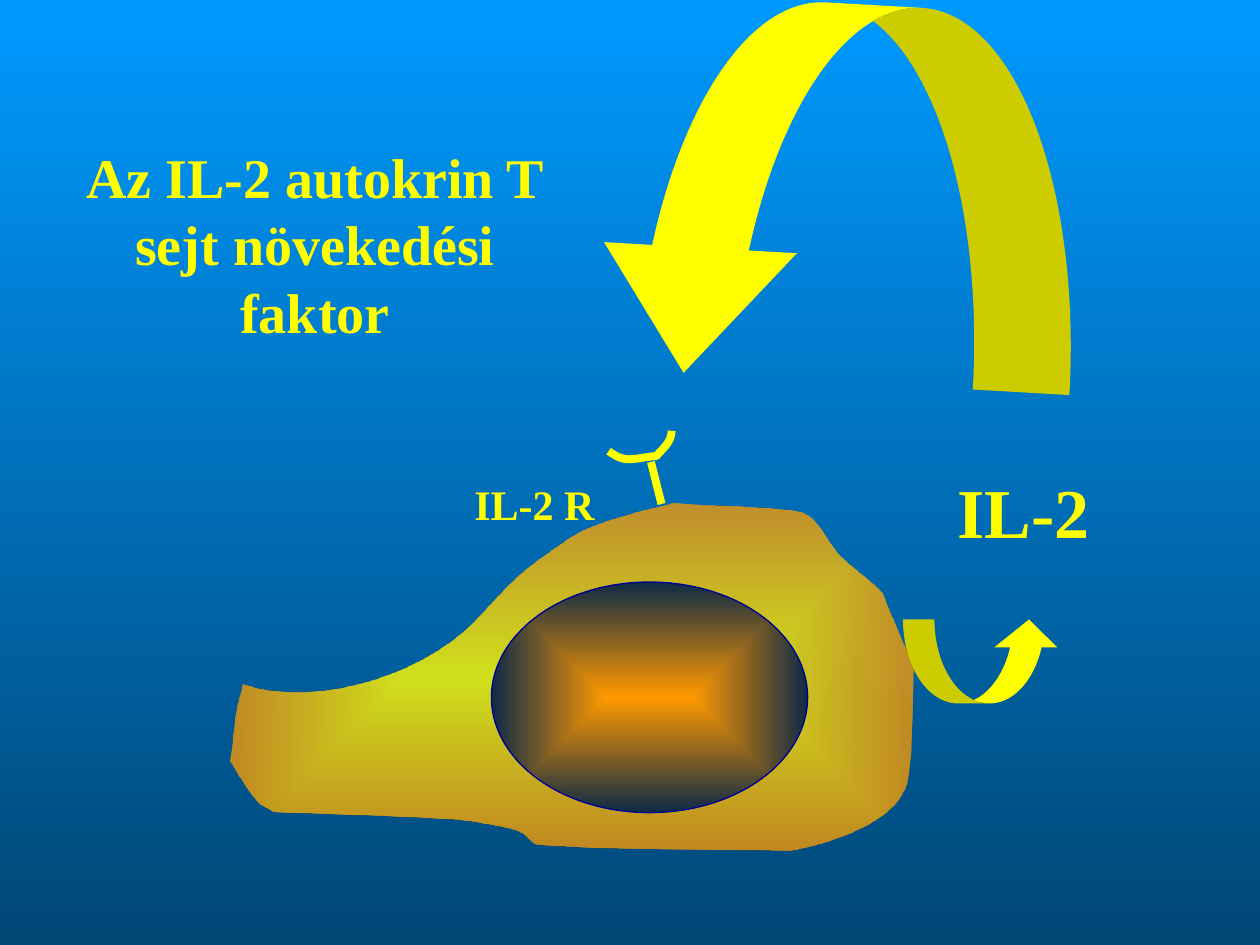
from dataclasses import dataclass

from lxml.etree import SubElement
from pptx import Presentation
from pptx.dml.color import RGBColor
from pptx.enum.shapes import MSO_CONNECTOR, MSO_SHAPE
from pptx.enum.text import MSO_AUTO_SIZE, PP_ALIGN
from pptx.oxml import parse_xml
from pptx.oxml.ns import nsdecls, qn
from pptx.util import Pt


@dataclass(frozen=True)
class Theme:
    font: str = "Times New Roman"
    yellow: str = "FFFF00"
    orange: str = "FF9900"
    navy: str = "0E2A46"
    rim: str = "000099"
    sky: str = "0099FF"
    deep: str = "004776"
    title: int = 32
    cytokine: int = 40
    receptor: int = 24


theme = Theme()
rgb = RGBColor.from_string

deck = Presentation()
deck.slide_width, deck.slide_height = Pt(720), Pt(540)
slide = deck.slides.add_slide(deck.slide_layouts[6])
shapes = slide.shapes

backdrop = slide.background.fill
backdrop.gradient()
backdrop.gradient_angle = 270
for stop, color in zip(backdrop.gradient_stops, (theme.sky, theme.deep)):
    stop.color.rgb = rgb(color)


def add_label(text, left, top, width, height, *, size, align=PP_ALIGN.LEFT):
    frame = shapes.add_textbox(Pt(left), Pt(top), Pt(width), Pt(height)).text_frame
    frame.word_wrap = True
    frame.auto_size = MSO_AUTO_SIZE.SHAPE_TO_FIT_TEXT
    paragraph = frame.paragraphs[0]
    paragraph.alignment = align
    run = paragraph.add_run()
    run.text = text
    run.font.name, run.font.size, run.font.bold = theme.font, Pt(size), True
    run.font.color.rgb = rgb(theme.yellow)


def add_curve(points, close):
    """Draw cubic curves: a start point, then two controls and an end per curve."""
    corners = [(Pt(x), Pt(y)) for x, y in points]
    builder = shapes.build_freeform(*corners[0], scale=1.0)
    builder.add_line_segments(corners[1:], close=close)
    curve = builder.convert_to_shape()
    curve.shadow.inherit = False
    # Every three straight segments become one Bézier segment.
    segments = list(curve._element.iter(qn("a:lnTo")))
    for first, second, last in zip(segments[::3], segments[1::3], segments[2::3]):
        bezier = parse_xml(f"<a:cubicBezTo {nsdecls('a')}/>")
        first.addprevious(bezier)
        for segment in (first, second, last):
            bezier.append(segment[0])
            segment.getparent().remove(segment)
    return curve


cell = add_curve([
    (139, 391),
    (180, 404.6), (241.2, 386.6), (272.2, 354.2),
    (293.8, 331.2), (294.5, 329), (321.8, 310.3),
    (332.6, 302.4), (344.2, 298.8), (356.4, 295.2),
    (365.8, 292.3), (384.5, 288), (384.5, 288),
    (406.1, 289.4), (427, 289.4), (447.8, 291.6),
    (452.9, 292.3), (457.9, 292.3), (462.2, 295.2),
    (469.4, 301), (473, 310.3), (479.5, 317.5),
    (487.4, 325.4), (496.8, 331.2), (504, 339.1),
    (509.8, 354.2), (517, 368.6), (522, 383),
    (520.6, 403.9), (522, 425.5), (518.4, 445.7),
    (513.4, 470.9), (470.2, 482.4), (451.4, 486),
    (403.2, 484.6), (355.7, 486), (307.4, 482.4),
    (303.1, 481.7), (301, 476.6), (297.4, 475.2),
    (289.4, 471.6), (262.8, 468), (258.5, 468),
    (224.6, 465.8), (190.8, 465.1), (156.2, 463.7),
    (153.4, 461.5), (148.3, 460.1), (146.2, 456.5),
    (140.4, 450), (131.8, 434.9), (131.8, 434.9),
    (136.1, 400.3), (133.2, 414.7), (139, 391),
], close=True)
cell.line.fill.background()

nucleus = shapes.add_shape(MSO_SHAPE.OVAL, Pt(280.8), Pt(332.6), Pt(180.7), Pt(131.8))
nucleus.shadow.inherit = False
nucleus.line.color.rgb, nucleus.line.width = rgb(theme.rim), Pt(0.75)

# Gradients that spread from the centre, as colour and opacity in percent
for body, spread, inner, outer in (
    (cell, "rect", (theme.yellow, 81), (theme.orange, 75)),
    (nucleus, "shape", (theme.orange, 100), (theme.navy, 100)),
):
    body.fill.gradient()
    gradient = body._element.spPr.find(qn("a:gradFill"))
    stops = gradient.find(qn("a:gsLst"))
    for child in list(gradient):
        if child is not stops:
            gradient.remove(child)
    for stop, (color, opacity) in zip(body.fill.gradient_stops, (inner, outer)):
        stop.color.rgb = rgb(color)
    for stop, (color, opacity) in zip(stops, (inner, outer)):
        if opacity < 100:
            SubElement(stop[0], qn("a:alpha"), val=str(opacity * 1000))
    center = SubElement(gradient, qn("a:path"), path=spread)
    SubElement(center, qn("a:fillToRect"), l="50000", t="50000", r="50000", b="50000")

add_label("IL-2", 540, 264, 114, 55.4, size=theme.cytokine)

receptor_cup = add_curve([
    (347.8, 257.8),
    (357.8, 265), (360, 262.1), (375.1, 260.6),
    (378.7, 256.3), (383.8, 252.7), (383.8, 246.2),
], close=False)
receptor_cup.fill.background()
receptor_stem = shapes.add_connector(
    MSO_CONNECTOR.STRAIGHT, Pt(372), Pt(264), Pt(378), Pt(288))
SubElement(receptor_stem._element.spPr, qn("a:effectLst"))
for part in (receptor_cup, receptor_stem):
    part.line.color.rgb, part.line.width = rgb(theme.yellow), Pt(4.5)

# Secretion from the cell, then the return to its own receptor
for preset, box, rotation, adjustments in (
    (MSO_SHAPE.CURVED_UP_ARROW, (516, 354, 90, 48), 0, (0.375, 0.75, 0.333)),
    (MSO_SHAPE.CURVED_RIGHT_ARROW, (371.5, -28, 216, 276), 93.3, (0.256, 0.511, 0.333)),
):
    arrow = shapes.add_shape(preset, *map(Pt, box))
    arrow.shadow.inherit = False
    arrow.rotation = rotation
    for index, value in enumerate(adjustments):
        arrow.adjustments[index] = value
    arrow.fill.solid()
    arrow.fill.fore_color.rgb = rgb(theme.yellow)
    arrow.line.fill.background()

add_label("Az IL-2 autokrin T sejt növekedési faktor", 24, 78, 312, 122.4,
          size=theme.title, align=PP_ALIGN.CENTER)
add_label("IL-2 R", 264, 270, 90, 36, size=theme.receptor)

deck.save("out.pptx")
